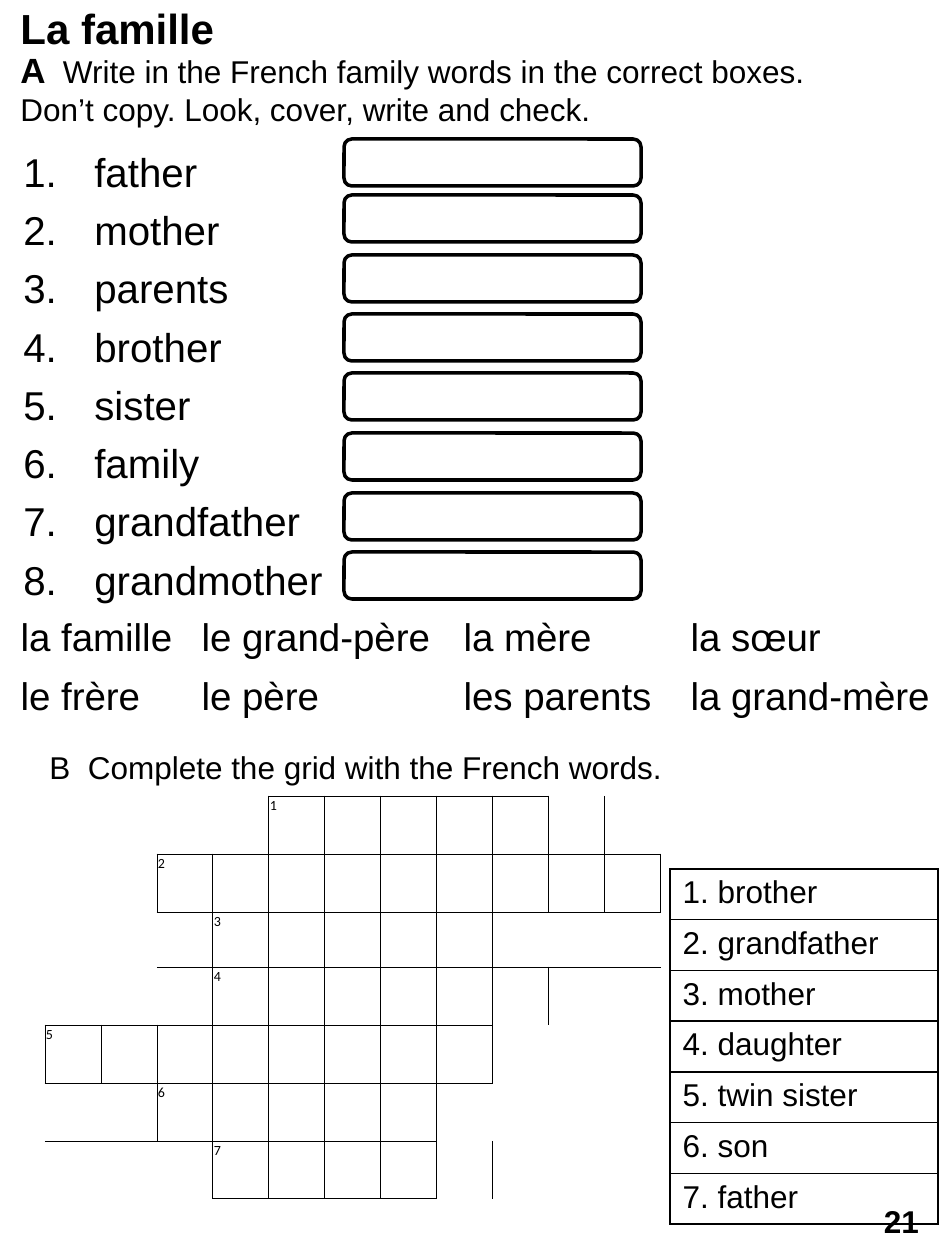
from lxml import etree
from pptx import Presentation
from pptx import util as u
from pptx.dml.color import RGBColor
from pptx.enum import shapes, text
from pptx.oxml import ns

BLACK = RGBColor(0, 0, 0)
PLAIN_TABLE = "{2D5ABB26-0587-4C30-8999-92F81FD0307C}"
SIDES = {"L": (0, -1), "R": (0, 1), "T": (-1, 0), "B": (1, 0)}

FAMILY = ["father", "mother", "parents", "brother", "sister", "family",
          "grandfather", "grandmother"]
VOCABULARY = [["la famille", "le grand-père", "la mère", "la sœur"],
              ["le frère", "le père", "les parents", "la grand-mère"]]
CLUES = ["brother", "grandfather", "mother", "daughter", "twin sister", "son", "father"]
ANSWERS = [(4, 5), (2, 9), (3, 4), (3, 5), (0, 7), (2, 4), (3, 4)]
GRID_COLUMNS = 11


def px(value):
    return u.Emu(round(value * 914400 / 126))


class Worksheet:
    def __init__(self, slide, font="Arial", color=BLACK):
        self.slide, self.font, self.color = slide, font, color

    def run(self, paragraph, words, size, bold=False, font=None):
        run = paragraph.add_run()
        run.text = words
        self.style(run.font, size, bold, font)

    def style(self, font, size, bold=False, name=None):
        values = {"name": name or self.font, "size": u.Pt(size), "bold": bold}
        for key, value in values.items():
            setattr(font, key, value)
        font.color.rgb = self.color

    def text(self, box, *runs, wrap=True, anchor=text.MSO_ANCHOR.TOP):
        frame = self.slide.shapes.add_textbox(*map(px, box)).text_frame
        frame.word_wrap = wrap
        frame.vertical_anchor = anchor
        for run in runs:
            self.run(frame.paragraphs[0], *run)

    def numbered(self, box, items, size, indent, gap):
        frame = self.slide.shapes.add_textbox(*map(px, box)).text_frame
        frame.word_wrap = True
        for index, item in enumerate(items):
            paragraph = frame.add_paragraph() if index else frame.paragraphs[0]
            paragraph.space_before = u.Pt(gap)
            self.run(paragraph, item, size)
            properties = paragraph._p.get_or_add_pPr()
            properties.set("marL", str(px(indent)))
            properties.set("indent", str(-px(indent)))
            etree.SubElement(properties, ns.qn("a:buFont"), typeface=self.font)
            etree.SubElement(properties, ns.qn("a:buAutoNum"), type="arabicPeriod")

    def rounded(self, box, line=None):
        shape = self.slide.shapes.add_shape(
            shapes.MSO_SHAPE.ROUNDED_RECTANGLE, *map(px, box))
        shape.shadow.inherit = False
        shape.fill.background()
        if line:
            shape.line.color.rgb = self.color
            shape.line.width = u.Pt(line)
        else:
            shape.line.fill.background()
        return shape

    def page_number(self, box, number, size):
        frame = self.rounded(box).text_frame
        frame.vertical_anchor = text.MSO_ANCHOR.MIDDLE
        paragraph = frame.paragraphs[0]
        paragraph.alignment = text.PP_ALIGN.CENTER
        self.run(paragraph, number, size, True)

    def border(self, cell, side, width):
        properties = cell._tc.get_or_add_tcPr()
        line = etree.SubElement(properties, ns.qn(f"a:ln{side}"), w=str(u.Pt(width)))
        fill = etree.SubElement(line, ns.qn("a:solidFill"))
        etree.SubElement(fill, ns.qn("a:srgbClr"), val=str(self.color))

    def table(self, left, top, widths, heights, words, size, font=None,
              line=None, margin=None, boxed=None):
        frame = self.slide.shapes.add_table(
            len(heights), len(widths), px(left), px(top),
            px(sum(widths)), px(sum(heights)))
        for style in frame._element.iter(ns.qn("a:tableStyleId")):
            style.text = PLAIN_TABLE
        table = frame.table
        table.first_row = table.horz_banding = False
        for column, width in zip(table.columns, widths):
            column.width = px(width)
        for row, height in zip(table.rows, heights):
            row.height = px(height)
        for r in range(len(heights)):
            for c in range(len(widths)):
                cell = table.cell(r, c)
                if margin is not None:
                    for side in ("left", "right", "top", "bottom"):
                        setattr(cell, f"margin_{side}", px(margin))
                paragraph = cell.text_frame.paragraphs[0]
                self.style(paragraph.font, size, name=font)
                if words[r][c]:
                    self.run(paragraph, words[r][c], size, font=font)
                for side, (down, across) in SIDES.items():
                    if line and (boxed is None or {(r, c), (r + down, c + across)} & boxed):
                        self.border(cell, side, line)
                cell.fill.background()


def main():
    presentation = Presentation()
    presentation.slide_width, presentation.slide_height = px(945), px(1260)
    slide = presentation.slides.add_slide(presentation.slide_layouts[6])
    sheet = Worksheet(slide)

    sheet.numbered((11, 141, 557, 417), FAMILY, 23, indent=71, gap=5.7)
    sheet.table(8, 610, [181, 262, 227, 328], [58, 58], VOCABULARY, 22)
    sheet.text((8, -4, 221, 63), ("La famille", 24, True), wrap=False,
               anchor=text.MSO_ANCHOR.MIDDLE)
    sheet.text((8, 42, 873, 93), ("A ", 20, True),
               (" Write in the French family words in the correct boxes. "
                "Don’t copy. Look, cover, write and check.", 18))
    for top in [139] + [195 + round(59.5 * index) for index in range(len(FAMILY) - 1)]:
        sheet.rounded((344, top, 297, 47), line=2)

    sheet.text((37, 742, 645, 50), ("B  Complete the grid with the French words.", 18))
    clues = [[f"{number}. {clue}"] for number, clue in enumerate(CLUES, 1)]
    sheet.table(670, 869, [268], [50 + index % 2 for index in range(len(CLUES))],
                clues, 18, line=1)
    sheet.page_number((867, 1191, 69, 59), "21", 18)

    boxed = {(row, start + offset) for row, (start, length) in enumerate(ANSWERS)
             for offset in range(length)}
    numbers = [[str(row + 1) if column == start else "" for column in range(GRID_COLUMNS)]
               for row, (start, _) in enumerate(ANSWERS)]
    sheet.table(45, 796, [56] * GRID_COLUMNS, [58, 58, 55, 58, 58, 58, 58], numbers, 8,
                font="Calibri", line=0.5, margin=1, boxed=boxed)

    presentation.save("out.pptx")


if __name__ == "__main__":
    main()
